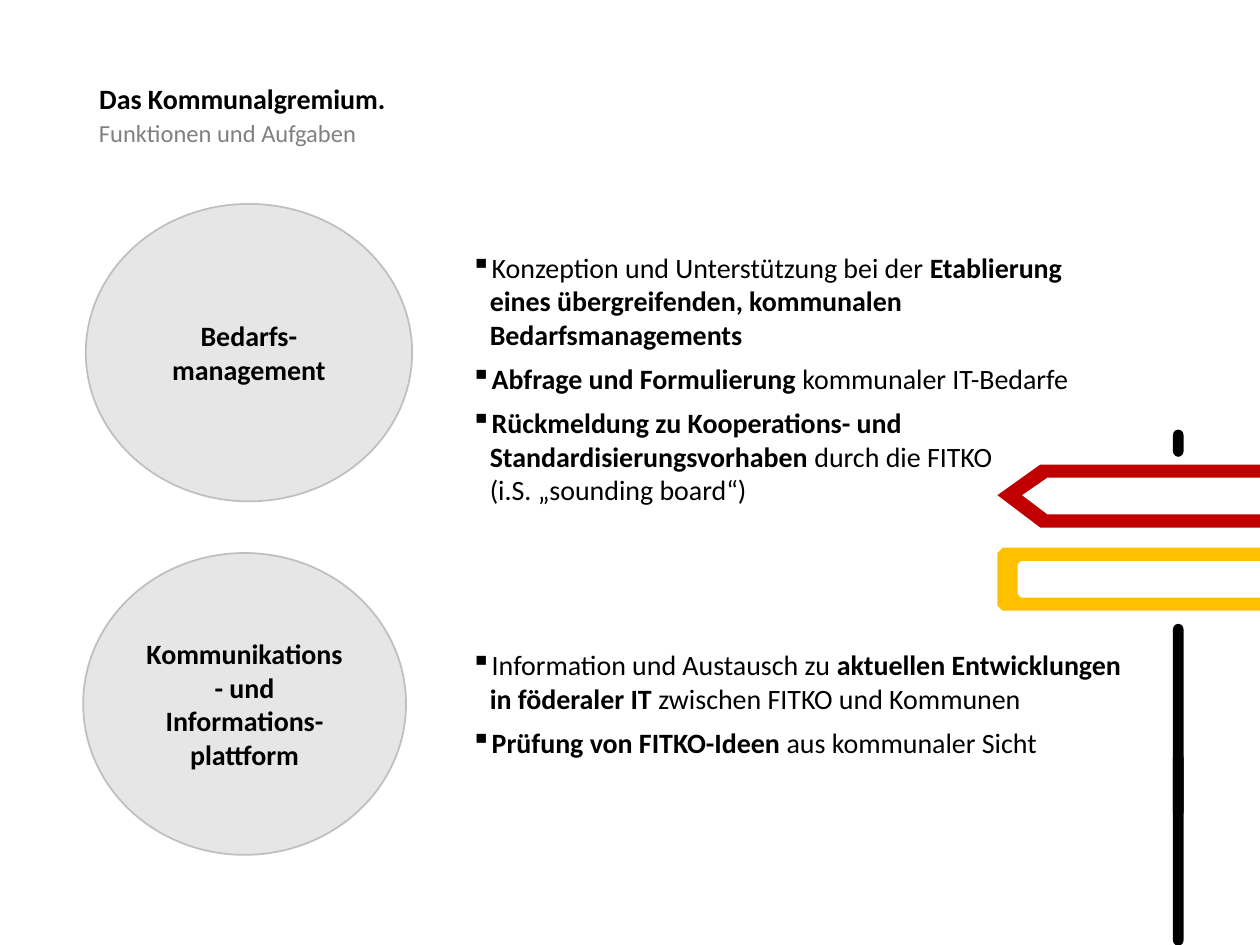
"""Build the slide on the functions and tasks of the Kommunalgremium."""
from lxml.etree import SubElement
from pptx import Presentation
from pptx.dml.color import RGBColor
from pptx.enum.shapes import MSO_SHAPE as Shape
from pptx.enum.text import MSO_ANCHOR as Anchor, MSO_AUTO_SIZE as AutoSize, PP_ALIGN as Align
from pptx.oxml.ns import qn
from pptx.util import Pt

COLORS = {
    "text": "000000", "subtitle": "808080", "circle": "E7E6E6", "outline": "BFBFBF",
    "red": "C00000", "yellow": "FFC000", "post": "010101",
}
SIGN_LEFT, SIGN_RIGHT, SIGN_STEP = 570, 772.5, 47.5
SIGN_OUTER = [(570, 283), (594.5, 265.5), (769.5, 265.5), (772.5, 268.5),
              (772.5, 298.5), (769.5, 301.5), (594.5, 301.5)]
SIGN_INNER = [(584, 283), (598.5, 273), (759, 273), (761, 275),
              (761, 292), (759, 294), (598.5, 294)]
POSTS = [(356.5, 110.5), (245.5, 15.5), (430, 110.5)]

CIRCLES = [
    ("Bedarfs-management", (49, 116.5, 186.5, 170)),
    ("Kommunikations- und Informations-plattform", (47.5, 316, 184.5, 172.5)),
]
TASKS = [
    ((262, 139.5, 375, 155), [
        [("Konzeption und Unterstützung bei der ", False),
         ("Etablierung eines übergreifenden, kommunalen Bedarfsmanagements", True)],
        [("Abfrage und Formulierung ", True), ("kommunaler IT-Bedarfe", False)],
        [("Rückmeldung zu Kooperations- und Standardisierungsvorhaben ", True),
         ("durch die FITKO\n(i.S. „sounding board“)", False)],
    ]),
    ((262, 366.5, 398, 71.5), [
        [("Information und Austausch zu ", False),
         ("aktuellen Entwicklungen\nin föderaler IT", True),
         (" zwischen FITKO und Kommunen", False)],
        [("Prüfung von FITKO-Ideen ", True), ("aus kommunaler Sicht", False)],
    ]),
]


def rgb(name):
    """Return the named colour."""
    return RGBColor.from_string(COLORS[name])


def add_bullet(paragraph):
    """Give a paragraph a hanging square bullet."""
    properties = paragraph._p.get_or_add_pPr()
    properties.set("marL", str(Pt(10.8)))
    properties.set("indent", str(Pt(-10.8)))
    SubElement(properties, qn("a:buChar"), char="▪")


def write(frame, paragraphs, size=16, color="text", align=Align.LEFT, anchor=Anchor.TOP,
          fit=AutoSize.NONE, spacing=None, bullets=False):
    """Write paragraphs of (text, bold) runs into a text frame."""
    frame.word_wrap, frame.auto_size, frame.vertical_anchor = True, fit, anchor
    for number, runs in enumerate(paragraphs):
        paragraph = frame.add_paragraph() if number else frame.paragraphs[0]
        if bullets:
            add_bullet(paragraph)
        paragraph.alignment = align
        paragraph.line_spacing = spacing
        paragraph.space_before = Pt(6 if number else 0)
        for text, bold in runs:
            for row, line in enumerate(text.split("\n")):
                if row:
                    paragraph.add_line_break()
                run = paragraph.add_run()
                run.text = line
                run.font.name, run.font.size, run.font.bold = "Calibri", Pt(size), bold
                run.font.color.rgb = rgb(color)


def paint(shape, fill, outline=None):
    """Set fill and outline and drop the shadow."""
    shape.shadow.inherit = False
    shape.fill.solid()
    shape.fill.fore_color.rgb = rgb(fill)
    if outline:
        shape.line.color.rgb, shape.line.width = rgb(outline), Pt(1)
    else:
        shape.line.fill.background()


def add_title(slide, text):
    """Place and format the title."""
    title = slide.shapes.title
    title.left, title.top, title.width, title.height = Pt(49.5), Pt(44), Pt(620.5), Pt(26.5)
    write(title.text_frame, [[(text, True)]], anchor=Anchor.MIDDLE, spacing=0.9)


def add_text(slide, box, paragraphs, **style):
    """Add a text box."""
    write(slide.shapes.add_textbox(*map(Pt, box)).text_frame, paragraphs, **style)


def add_circle(slide, label, box):
    """Add a labelled ellipse."""
    circle = slide.shapes.add_shape(Shape.OVAL, *map(Pt, box))
    paint(circle, "circle", "outline")
    write(circle.text_frame, [[(label, True)]], align=Align.CENTER, anchor=Anchor.MIDDLE)


def add_sign(slide, color, contours):
    """Add a hollow direction sign from its outer and inner contours."""
    outer, inner = [[(Pt(x), Pt(y)) for x, y in contour] for contour in contours]
    builder = slide.shapes.build_freeform(*outer[0])
    builder.add_line_segments(outer[1:], close=True)
    builder.move_to(*inner[0])
    builder.add_line_segments(inner[1:], close=True)
    paint(builder.convert_to_shape(), color)


def mirrored(contour):
    """Turn a sign contour to the right and move it one step down."""
    return [(SIGN_LEFT + SIGN_RIGHT - x, y + SIGN_STEP) for x, y in contour]


def add_post(slide, top, height):
    """Add a round-ended piece of the signpost."""
    post = slide.shapes.add_shape(Shape.ROUNDED_RECTANGLE, Pt(670.3), Pt(top), Pt(6), Pt(height))
    post.adjustments[0] = 0.5
    paint(post, "post")


def main():
    """Build and save the slide."""
    presentation = Presentation()
    presentation.slide_width, presentation.slide_height = Pt(720), Pt(540)
    slide = presentation.slides.add_slide(presentation.slide_layouts[5])
    add_text(slide, (49.5, 67, 620.5, 21.5), [[("Funktionen und Aufgaben", False)]],
             size=14, color="subtitle", spacing=0.8)
    add_title(slide, "Das Kommunalgremium.")
    for label, box in CIRCLES:
        add_circle(slide, label, box)
    for box, tasks in TASKS:
        add_text(slide, box, tasks, fit=AutoSize.SHAPE_TO_FIT_TEXT, bullets=True)
    add_sign(slide, "yellow", [mirrored(SIGN_OUTER), mirrored(SIGN_INNER)])
    add_sign(slide, "red", [SIGN_OUTER, SIGN_INNER])
    for top, height in POSTS:
        add_post(slide, top, height)
    presentation.save("out.pptx")


if __name__ == "__main__":
    main()
